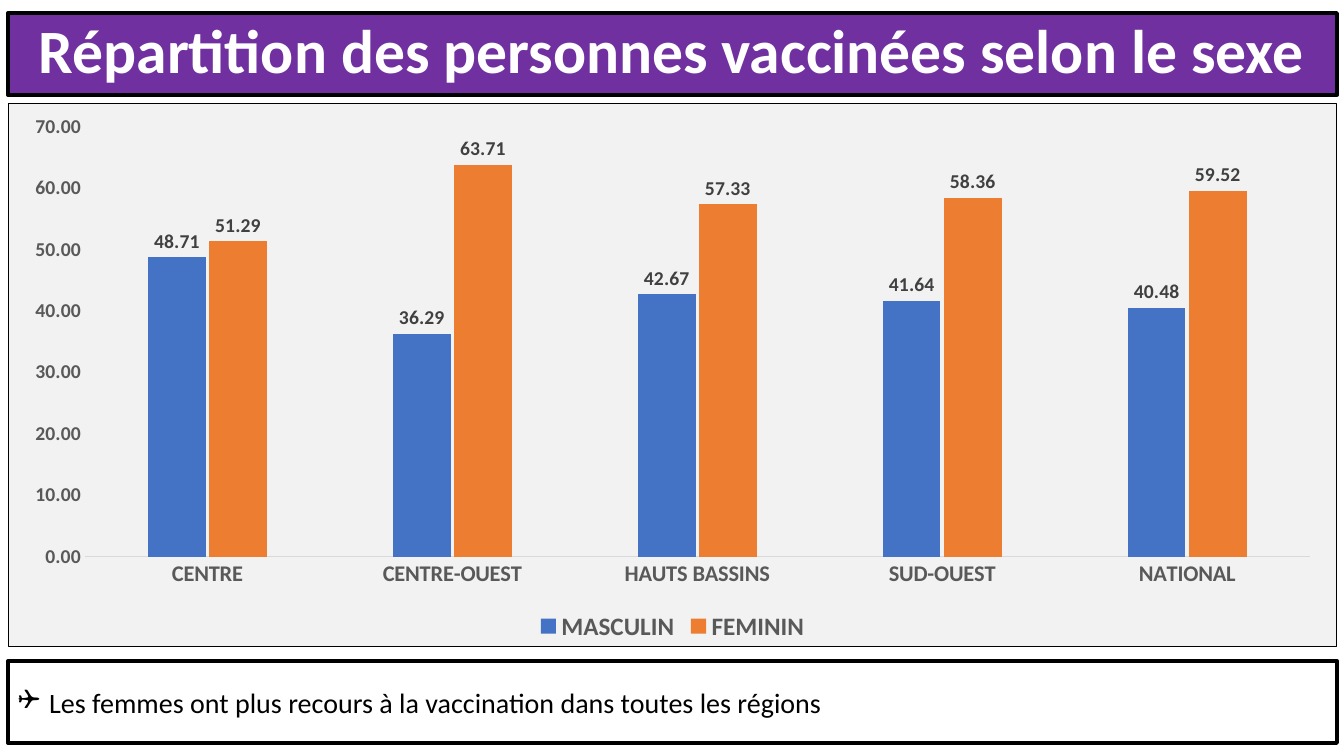
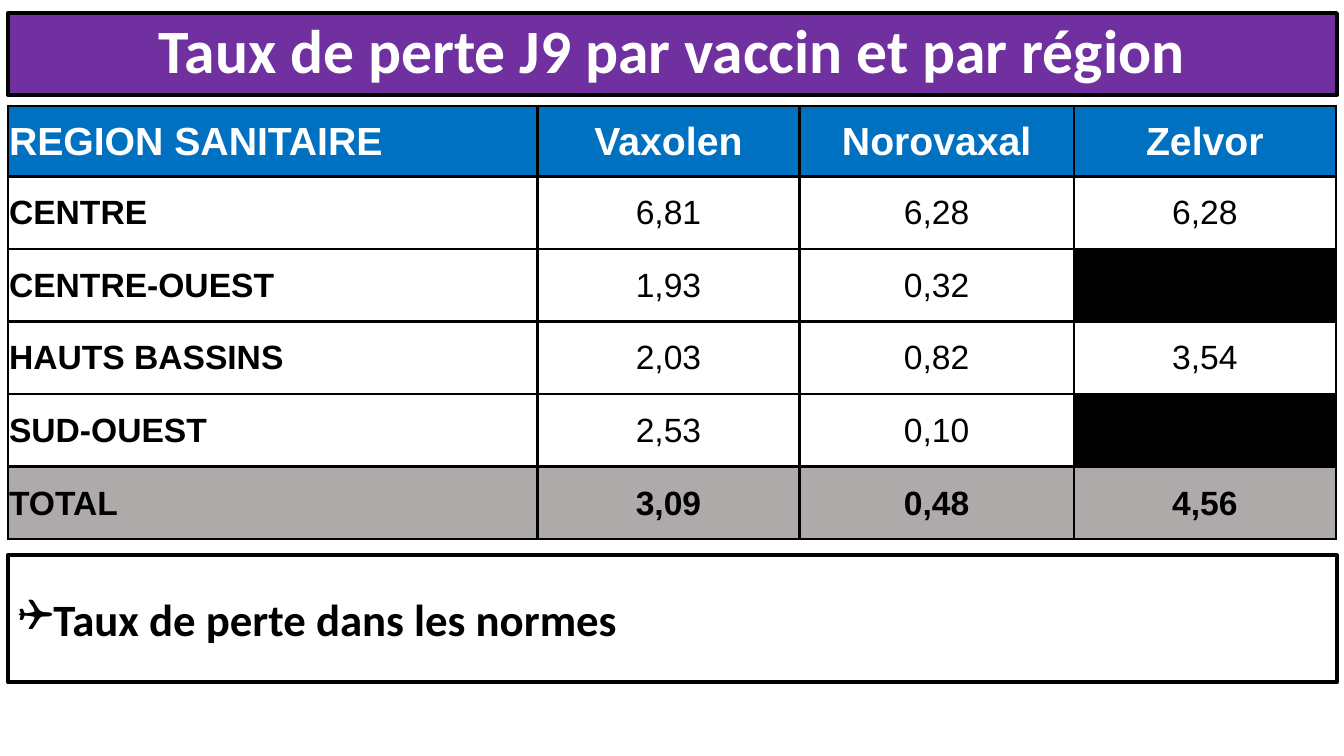
from lxml.etree import SubElement
from pptx import Presentation
from pptx.chart.data import CategoryChartData
from pptx.dml.color import RGBColor
from pptx.enum.chart import XL_CHART_TYPE, XL_LABEL_POSITION, XL_LEGEND_POSITION, XL_TICK_MARK
from pptx.enum.shapes import MSO_SHAPE
from pptx.enum.text import MSO_ANCHOR, MSO_AUTO_SIZE, PP_ALIGN
from pptx.oxml import parse_xml
from pptx.oxml.ns import nsdecls, qn
from pptx.util import Pt

EMU_PER_PX = 9144
LEFT, WIDTH = 8, 1318

COLORS = {
    "band": "7030A0",
    "header": "0070C0",
    "total": "AEAAAA",
    "panel": "F2F2F2",
    "male": "4472C4",
    "female": "ED7D31",
    "axis": "D9D9D9",
    "axis_text": "595959",
    "label_text": "404040",
    "white": "FFFFFF",
    "black": "000000",
}


def px(length):
    return length * EMU_PER_PX


def rgb(name):
    return RGBColor.from_string(COLORS[name])


class SlideBuilder:
    def __init__(self, body_font="Calibri", table_font="Arial"):
        self.body_font = body_font
        self.table_font = table_font
        self.deck = Presentation()
        self.deck.slide_width = px(1333)
        self.deck.slide_height = px(750)
        self.slide = None

    def style_font(self, font, size, color, bold=True, name=None):
        font.name = name or self.body_font
        font.size = Pt(size)
        font.bold = bold
        font.color.rgb = rgb(color)

    def add_span(self, para, text, size, color, bold=True, name=None):
        span = para.add_run()
        span.text = text
        self.style_font(span.font, size, color, bold, name)

    def frame_shape(self, shape, fill):
        shape.fill.solid()
        shape.fill.fore_color.rgb = rgb(fill)
        shape.line.color.rgb = rgb("black")
        shape.line.width = Pt(3)
        shape.text_frame.word_wrap = True
        shape.text_frame.vertical_anchor = MSO_ANCHOR.MIDDLE

    def add_page(self, heading):
        self.slide = self.deck.slides.add_slide(self.deck.slide_layouts[5])
        title = self.slide.shapes.title
        title.left, title.top = px(LEFT), px(13)
        title.width, title.height = px(WIDTH), px(81)
        self.frame_shape(title, "band")
        title.text_frame.auto_size = MSO_AUTO_SIZE.NONE
        para = title.text_frame.paragraphs[0]
        para.alignment = PP_ALIGN.CENTER
        para.line_spacing = 0.9
        self.add_span(para, heading, 44, "white")

    def add_note_box(self, text, top, height, size, bold):
        box = self.slide.shapes.add_shape(
            MSO_SHAPE.RECTANGLE, px(LEFT), px(top), px(WIDTH), px(height))
        box.shadow.inherit = False
        self.frame_shape(box, "white")
        para = box.text_frame.paragraphs[0]
        para.alignment = PP_ALIGN.LEFT
        self.add_span(para, text, size, "black", bold)
        properties = para._p.get_or_add_pPr()
        properties.set("marL", str(px(31)))
        properties.set("indent", str(-px(31)))
        SubElement(properties, qn("a:buFont"), typeface="Wingdings")
        SubElement(properties, qn("a:buChar"), char="❑")

    def add_column_chart(self, categories, series, top, height):
        data = CategoryChartData(number_format="0.00")
        data.categories = categories
        for name, values, color in series:
            data.add_series(name, values)
        chart = self.slide.shapes.add_chart(
            XL_CHART_TYPE.COLUMN_CLUSTERED,
            px(LEFT), px(top), px(WIDTH), px(height), data).chart
        self.style_font(chart.font, 10, "black")
        chart.has_title = False
        self.frame_chart(chart)

        chart.has_legend = True
        chart.legend.position = XL_LEGEND_POSITION.BOTTOM
        chart.legend.include_in_layout = False
        self.style_font(chart.legend.font, 18, "axis_text")

        for axis, size in ((chart.category_axis, 16), (chart.value_axis, 14)):
            axis.has_major_gridlines = False
            axis.major_tick_mark = XL_TICK_MARK.NONE
            axis.minor_tick_mark = XL_TICK_MARK.NONE
            self.style_font(axis.tick_labels.font, size, "axis_text")
        chart.category_axis.format.line.color.rgb = rgb("axis")
        chart.category_axis.format.line.width = Pt(0.75)
        value_axis = chart.value_axis
        value_axis.format.line.fill.background()
        value_axis.minimum_scale = 0
        value_axis.maximum_scale = 70
        value_axis.major_unit = 10
        value_axis.tick_labels.number_format = "0.00"
        value_axis.tick_labels.number_format_is_linked = False

        plot = chart.plots[0]
        plot.vary_by_categories = False
        plot.gap_width = 219
        plot.overlap = -6
        for bars, (name, values, color) in zip(plot.series, series):
            bars.format.fill.solid()
            bars.format.fill.fore_color.rgb = rgb(color)
            bars.invert_if_negative = False
            labels = bars.data_labels
            labels.show_value = True
            labels.position = XL_LABEL_POSITION.OUTSIDE_END
            labels.number_format = "0.00"
            labels.number_format_is_linked = False
            self.style_font(labels.font, 14, "label_text")

    def frame_chart(self, chart):
        frame = parse_xml(
            f'<c:spPr {nsdecls("c", "a")}>'
            f'<a:solidFill><a:srgbClr val="{COLORS["panel"]}"/></a:solidFill>'
            f'<a:ln w="{Pt(1)}"><a:solidFill><a:srgbClr val="{COLORS["black"]}"/>'
            '</a:solidFill></a:ln></c:spPr>')
        chart._chartSpace.find(qn("c:txPr")).addprevious(frame)

    def add_rate_table(self, rows, top, column_widths, row_heights):
        table = self.slide.shapes.add_table(
            len(rows), len(column_widths), px(LEFT), px(top),
            px(sum(column_widths)), px(sum(row_heights))).table
        table.first_row = False
        table.horz_banding = False
        for column, width in zip(table.columns, column_widths):
            column.width = px(width)
        for row, height in zip(table.rows, row_heights):
            row.height = px(height)
        last = len(rows) - 1
        for row_index, values in enumerate(rows):
            is_header, is_total = row_index == 0, row_index == last
            row_fill = "header" if is_header else "total" if is_total else "white"
            for column_index, text in enumerate(values):
                cell = table.cell(row_index, column_index)
                self.format_cell(cell, row_fill if text else "black")
                if not text:
                    continue
                para = cell.text_frame.paragraphs[0]
                para.alignment = PP_ALIGN.CENTER if column_index else PP_ALIGN.LEFT
                self.add_span(
                    para, text, 28 if is_header else 24,
                    "white" if is_header else "black",
                    is_header or is_total or column_index == 0, self.table_font)

    def format_cell(self, cell, fill):
        cell.fill.solid()
        cell.fill.fore_color.rgb = rgb(fill)
        cell.vertical_anchor = MSO_ANCHOR.MIDDLE
        cell.margin_left = cell.margin_right = cell.margin_top = px(1)
        cell.margin_bottom = 0
        properties = cell._tc.get_or_add_tcPr()
        for position, side in enumerate(("lnL", "lnR", "lnT", "lnB")):
            properties.insert(position, parse_xml(
                f'<a:{side} {nsdecls("a")} w="{Pt(2)}"><a:solidFill>'
                f'<a:srgbClr val="{COLORS["black"]}"/></a:solidFill></a:{side}>'))


def main():
    builder = SlideBuilder()

    builder.add_page("Répartition des personnes vaccinées selon le sexe")
    builder.add_note_box(
        "Les femmes ont plus recours à la vaccination dans toutes les régions",
        656, 81, 20, False)
    builder.add_column_chart(
        ["CENTRE", "CENTRE-OUEST", "HAUTS BASSINS", "SUD-OUEST", "NATIONAL"],
        [("MASCULIN", [48.71, 36.29, 42.67, 41.64, 40.48], "male"),
         ("FEMININ", [51.29, 63.71, 57.33, 58.36, 59.52], "female")],
        102, 540)

    builder.add_page("Taux de perte J9 par vaccin et par région")
    builder.add_note_box("Taux de perte dans les normes", 551, 126, 32, True)
    builder.add_rate_table(
        [("REGION SANITAIRE", "Vaxolen", "Norovaxal", "Zelvor"),
         ("CENTRE", "6,81", "6,28", "6,28"),
         ("CENTRE-OUEST", "1,93", "0,32", ""),
         ("HAUTS BASSINS", "2,03", "0,82", "3,54"),
         ("SUD-OUEST", "2,53", "0,10", ""),
         ("TOTAL", "3,09", "0,48", "4,56")],
        105, [525, 260, 272, 260], [70] + [72] * 5)

    builder.deck.save("out.pptx")


if __name__ == "__main__":
    main()
